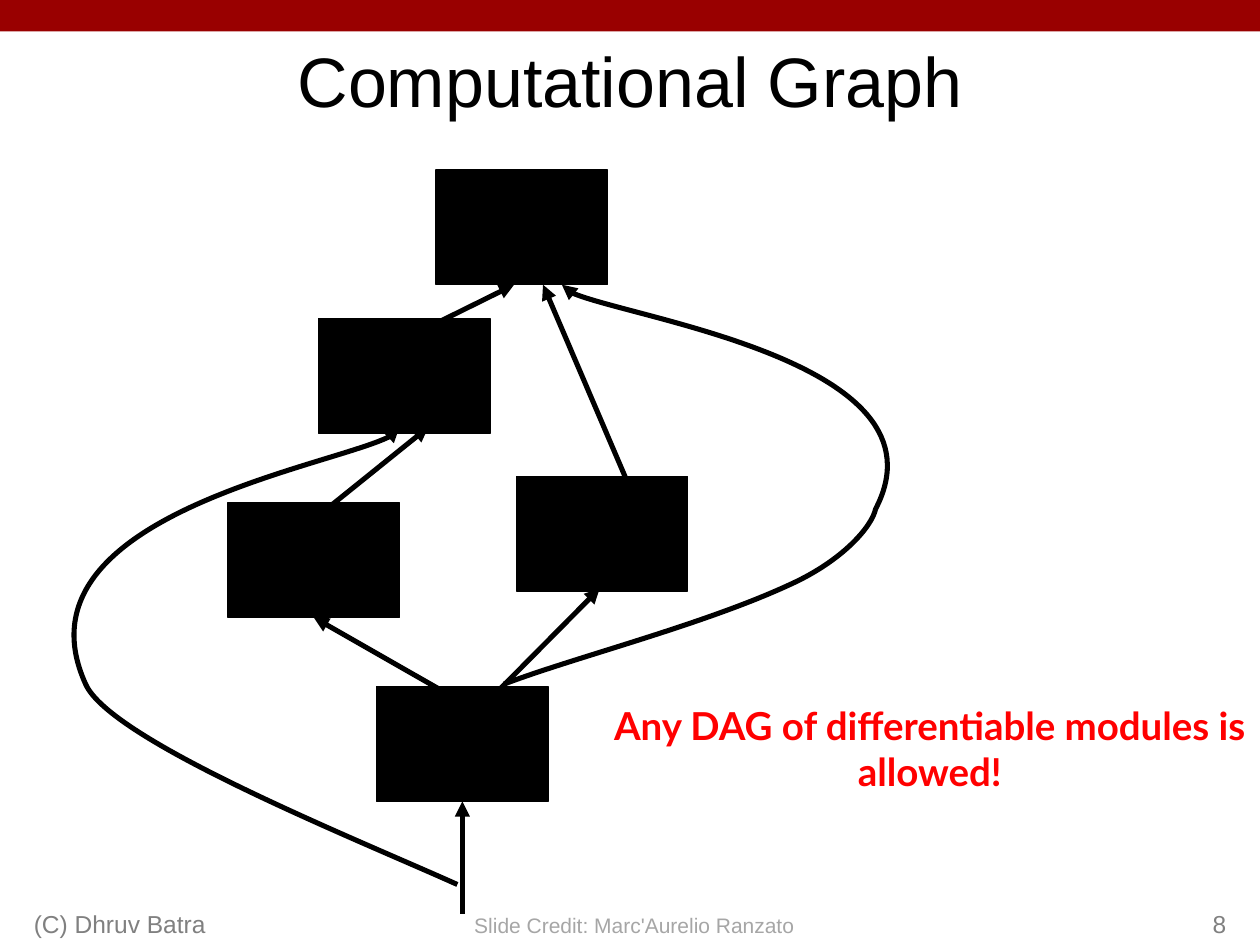
import pptx
import pptx.util
import pptx.dml.color
import pptx.enum.shapes
import pptx.enum.text
import pptx.oxml.ns
import lxml.etree
from dataclasses import dataclass

Inches = pptx.util.Inches
Pt = pptx.util.Pt
qn = pptx.oxml.ns.qn
Align = pptx.enum.text.PP_ALIGN
Anchor = pptx.enum.text.MSO_ANCHOR
BOTTOM = 2


@dataclass(frozen=True)
class Theme:
    banner: str = "990000"
    ink: str = "000000"
    claim: str = "FF0000"
    credit: str = "A6A6A6"
    footer: str = "808080"
    font: str = "Arial"
    claim_font: str = "Lato"
    title_size: float = 40
    claim_size: float = 22
    footer_size: float = 14
    credit_size: float = 12
    border: float = 0.75
    arrow: float = 2.89


def rgb(value):
    return pptx.dml.color.RGBColor.from_string(value)


def apply(target, values):
    for name, value in values.items():
        setattr(target, name, value)


class GraphSlide:
    def __init__(self, deck, theme):
        self.theme = theme
        self.slide = deck.slides.add_slide(deck.slide_layouts[6])
        self.shapes = self.slide.shapes

    def rectangle(self, left, top, width, height, fill, border=None):
        box = self.shapes.add_shape(
            pptx.enum.shapes.MSO_SHAPE.RECTANGLE,
            Inches(left), Inches(top), Inches(width), Inches(height),
        )
        box.shadow.inherit = False
        box.fill.solid()
        box.fill.fore_color.rgb = rgb(fill)
        if border:
            box.line.color.rgb = rgb(border)
            box.line.width = Pt(self.theme.border)
        else:
            box.line.fill.background()
        return box

    def module(self, left, top):
        return self.rectangle(left, top, 1.36, 0.91, self.theme.ink, self.theme.ink)

    def arrow_line(self, line):
        line.color.rgb = rgb(self.theme.ink)
        line.width = Pt(self.theme.arrow)
        outline = line._get_or_add_ln()
        head = lxml.etree.SubElement(outline, qn("a:tailEnd"))
        head.set("type", "triangle")

    def arrow(self, start, end, target=None):
        edge = self.shapes.add_connector(
            pptx.enum.shapes.MSO_CONNECTOR.STRAIGHT, *map(Inches, start + end)
        )
        if target is not None:
            edge.end_connect(target, BOTTOM)
        self.arrow_line(edge.line)
        lxml.etree.SubElement(edge._element.spPr, qn("a:effectLst"))

    def curved_arrow(self, start, *controls):
        points = [(Inches(x), Inches(y)) for x, y in (start, *controls)]
        builder = self.shapes.build_freeform(*points[0])
        builder.add_line_segments(points[1:], close=False)
        edge = builder.convert_to_shape()
        corners = list(edge._element.spPr.iter(qn("a:lnTo")))
        for first in range(0, len(corners), 3):
            outline = corners[first].getparent()
            curve = lxml.etree.SubElement(outline, qn("a:cubicBezTo"))
            for corner in corners[first:first + 3]:
                curve.append(corner[0])
                outline.remove(corner)
        edge.fill.background()
        self.arrow_line(edge.line)
        edge.shadow.inherit = False

    def text(self, words, place, font, color, paragraph=None, frame=None):
        box = self.shapes.add_textbox(*map(Inches, place))
        apply(box.text_frame, {"word_wrap": True, **(frame or {})})
        line = box.text_frame.paragraphs[0]
        apply(line, paragraph or {})
        run = line.add_run()
        run.text = words
        apply(run.font, {"name": self.theme.font, **font})
        run.font.color.rgb = rgb(color)


def main():
    deck = pptx.Presentation()
    apply(deck, {"slide_width": Inches(10), "slide_height": Inches(7.5)})
    theme = Theme()
    graph = GraphSlide(deck, theme)

    graph.rectangle(0, 0, 10, 0.25, theme.banner)

    left_module = graph.module(1.81, 3.99)
    graph.module(4.1, 3.78)
    input_module = graph.module(2.99, 5.45)
    graph.module(2.53, 2.53)
    graph.module(3.46, 1.35)

    graph.arrow((3.67, 7.25), (3.67, 6.36), input_module)
    graph.arrow((3.68, 5.58), (2.49, 4.9), left_module)
    graph.curved_arrow(
        (3.63, 7.02),
        (2.83, 6.66), (0.88, 5.88), (0.68, 5.43),
        (0.07, 4.09), (3.23, 3.6), (3.17, 3.39),
    )
    graph.curved_arrow(
        (4, 5.43),
        (4.55, 5.22), (5.58, 4.96), (6.27, 4.64),
        (6.69, 4.45), (6.92, 4.18), (6.95, 4.04),
        (7.56, 2.87), (4.41, 2.44), (4.46, 2.26),
    )
    graph.arrow((4.99, 3.85), (4.31, 2.26))
    graph.arrow((3.17, 2.71), (4.08, 2.26))
    graph.arrow((3.63, 5.81), (4.76, 4.67))

    centered = {"alignment": Align.CENTER}
    graph.text(
        "Any DAG of differentiable modules is allowed!", (4.76, 5.5, 5.24, 0.86),
        {"name": theme.claim_font, "size": Pt(theme.claim_size), "bold": True},
        theme.claim, centered,
        {"margin_left": Inches(0.09), "margin_right": Inches(0.09),
         "margin_top": Inches(0.07), "margin_bottom": Inches(0.04)},
    )
    graph.arrow((2.27, 4.3), (3.4, 3.39))

    graph.text(
        "Slide Credit: Marc'Aurelio Ranzato", (3.65, 7.19, 2.77, 0.3),
        {"size": Pt(theme.credit_size)}, theme.credit, centered,
        {"word_wrap": False, "auto_size": pptx.enum.text.MSO_AUTO_SIZE.SHAPE_TO_FIT_TEXT},
    )
    for words, place, side in (
        ("(C) Dhruv Batra", (0.17, 7, 3.17, 0.5), Align.LEFT),
        ("8", (7.75, 7, 2.08, 0.5), Align.RIGHT),
    ):
        graph.text(
            words, place, {"size": Pt(theme.footer_size)}, theme.footer,
            {"alignment": side}, {"vertical_anchor": Anchor.BOTTOM},
        )
    graph.text(
        "Computational Graph", (0.75, 0.25, 8.5, 0.75),
        {"size": Pt(theme.title_size)}, theme.ink, centered,
    )

    deck.save("out.pptx")


if __name__ == "__main__":
    main()
